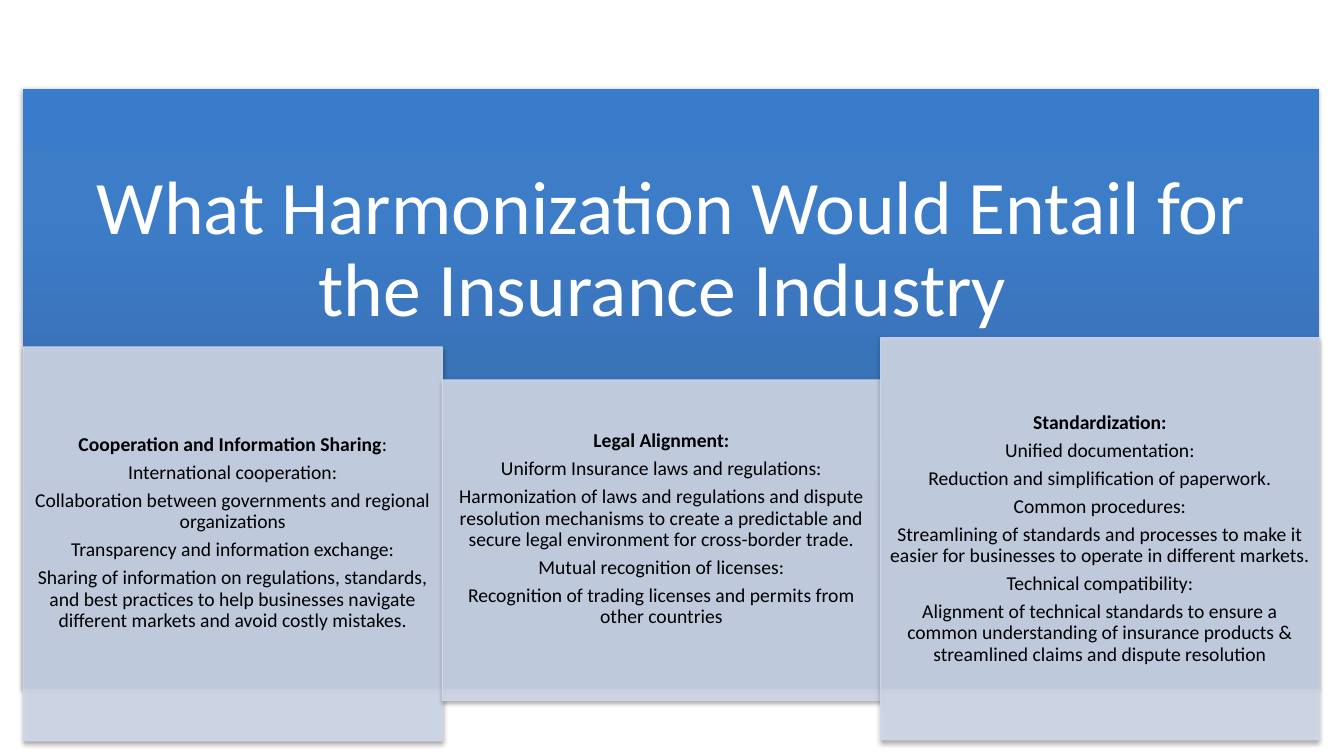
import pptx
import pptx.dml.color
import pptx.enum.shapes
import pptx.enum.text
import pptx.oxml
import pptx.oxml.ns
import pptx.util

Pt = pptx.util.Pt
COLORS = {
    "header_bottom": "2F5F99",
    "header_middle": "3D7CC7",
    "header_top": "3A7CCB",
    "panel": "D0D8E8",
    "title": "FFFFFF",
    "text": "000000",
    "shadow": "000000",
}
FONT = "Calibri"
TITLE = "What Harmonization Would Entail for the Insurance Industry "
HEADER = {"left": 16.6, "top": 63.4, "width": 925.7, "height": 429.1}
TITLE_HEIGHT = 231.8
TITLE_INSET = 30
PANELS = [
    {
        "top": 247.7, "width": 299.3, "height": 281.5, "side_inset": 8, "bottom_inset": 17,
        "heading": ("Cooperation and Information Sharing", ":"),
        "lines": [
            "International cooperation:",
            "Collaboration between governments and regional organizations",
            "Transparency and information exchange:",
            "Sharing of information on regulations, standards, and best practices to help "
            "businesses navigate different markets and avoid costly mistakes.",
        ],
    },
    {
        "top": 271.4, "width": 313.2, "height": 229, "side_inset": 8, "bottom_inset": 17,
        "heading": ("Legal Alignment:", ""),
        "lines": [
            "Uniform Insurance laws and regulations:",
            "Harmonization of laws and regulations and dispute resolution mechanisms to create "
            "a predictable and secure legal environment for cross-border trade.",
            "Mutual recognition of licenses:",
            "Recognition of trading licenses and permits from other countries",
        ],
    },
    {
        "top": 241.2, "width": 313.2, "height": 287.3, "side_inset": 6.5, "bottom_inset": 1.5,
        "heading": ("Standardization:", ""),
        "lines": [
            "Unified documentation:",
            "Reduction and simplification of paperwork.",
            "Common procedures:",
            "Streamlining of standards and processes to make it easier for businesses to operate "
            "in different markets.",
            "Technical compatibility:",
            "Alignment of technical standards to ensure a common understanding of insurance "
            "products & streamlined claims and dispute resolution",
        ],
    },
]


def rgb(name):
    return pptx.dml.color.RGBColor.from_string(COLORS[name])


def drawing_xml(markup):
    """Parse one drawing element, adding the namespace to its first tag."""
    tag, rest = markup.split(" ", 1)
    return pptx.oxml.parse_xml(f"{tag} {pptx.oxml.ns.nsdecls('a')} {rest}")


def add_shadow(shape):
    shape.shadow.inherit = False
    effects = shape._element.spPr.find(pptx.oxml.ns.qn("a:effectLst"))
    effects.append(drawing_xml(
        f'<a:outerShdw blurRad="{Pt(3.1)}" dist="{Pt(1.8)}" dir="5400000" rotWithShape="0">'
        f'<a:srgbClr val="{COLORS["shadow"]}"><a:alpha val="35000"/></a:srgbClr>'
        "</a:outerShdw>"))


def add_box(slide, left, top, width, height, insets):
    """Add a shadowed rectangle; insets are left, top, right and bottom."""
    shape = slide.shapes.add_shape(
        pptx.enum.shapes.MSO_SHAPE.RECTANGLE, Pt(left), Pt(top), Pt(width), Pt(height))
    add_shadow(shape)
    frame = shape.text_frame
    frame.word_wrap = True
    frame.vertical_anchor = pptx.enum.text.MSO_ANCHOR.MIDDLE
    frame.margin_left, frame.margin_top, frame.margin_right, frame.margin_bottom = map(Pt, insets)
    return shape


def format_paragraph(paragraph, size, color):
    paragraph.alignment = pptx.enum.text.PP_ALIGN.CENTER
    paragraph.line_spacing = 0.9
    paragraph.space_after = Pt(0.35 * size)
    for run in paragraph.runs:
        run.font.name = FONT
        run.font.size = Pt(size)
        run.font.color.rgb = rgb(color)


def add_header(slide):
    bottom_inset = HEADER["height"] - TITLE_HEIGHT + TITLE_INSET
    shape = add_box(slide, **HEADER,
                    insets=(TITLE_INSET, TITLE_INSET, TITLE_INSET, bottom_inset))
    shape.fill.gradient()
    shape.fill.gradient_angle = 90
    stops = shape._element.spPr.find(".//" + pptx.oxml.ns.qn("a:gsLst"))
    for stop in list(stops):
        stops.remove(stop)
    for position, name in ((0, "header_bottom"), (80, "header_middle"), (100, "header_top")):
        stops.append(drawing_xml(
            f'<a:gs pos="{position * 1000}"><a:srgbClr val="{COLORS[name]}"/></a:gs>'))
    shape.line.fill.background()
    shape.text_frame.text = TITLE
    format_paragraph(shape.text_frame.paragraphs[0], 54, "title")


def add_panel(slide, left, panel):
    side = panel["side_inset"]
    shape = add_box(slide, left, panel["top"], panel["width"], panel["height"],
                    (side, 1.5, side, panel["bottom_inset"]))
    shape.fill.solid()
    shape.fill.fore_color.rgb = rgb("panel")
    shape.line.color.rgb = rgb("panel")
    shape.line.width = Pt(0.75)
    for color in shape._element.spPr.findall(".//" + pptx.oxml.ns.qn("a:solidFill")):
        color[0].append(drawing_xml('<a:alpha val="90000"/>'))

    frame = shape.text_frame
    heading, ending = panel["heading"]
    frame.text = heading
    frame.paragraphs[0].runs[0].font.bold = True
    if ending:
        frame.paragraphs[0].add_run().text = ending
    for line in panel["lines"]:
        frame.add_paragraph().text = line
    for paragraph in frame.paragraphs:
        format_paragraph(paragraph, 14, "text")


def main():
    presentation = pptx.Presentation()
    presentation.slide_width = Pt(960)
    presentation.slide_height = Pt(540)
    slide = presentation.slides.add_slide(presentation.slide_layouts[6])
    add_header(slide)
    left = HEADER["left"]
    for panel in PANELS:
        add_panel(slide, left, panel)
        left += panel["width"]
    presentation.save("out.pptx")


if __name__ == "__main__":
    main()
